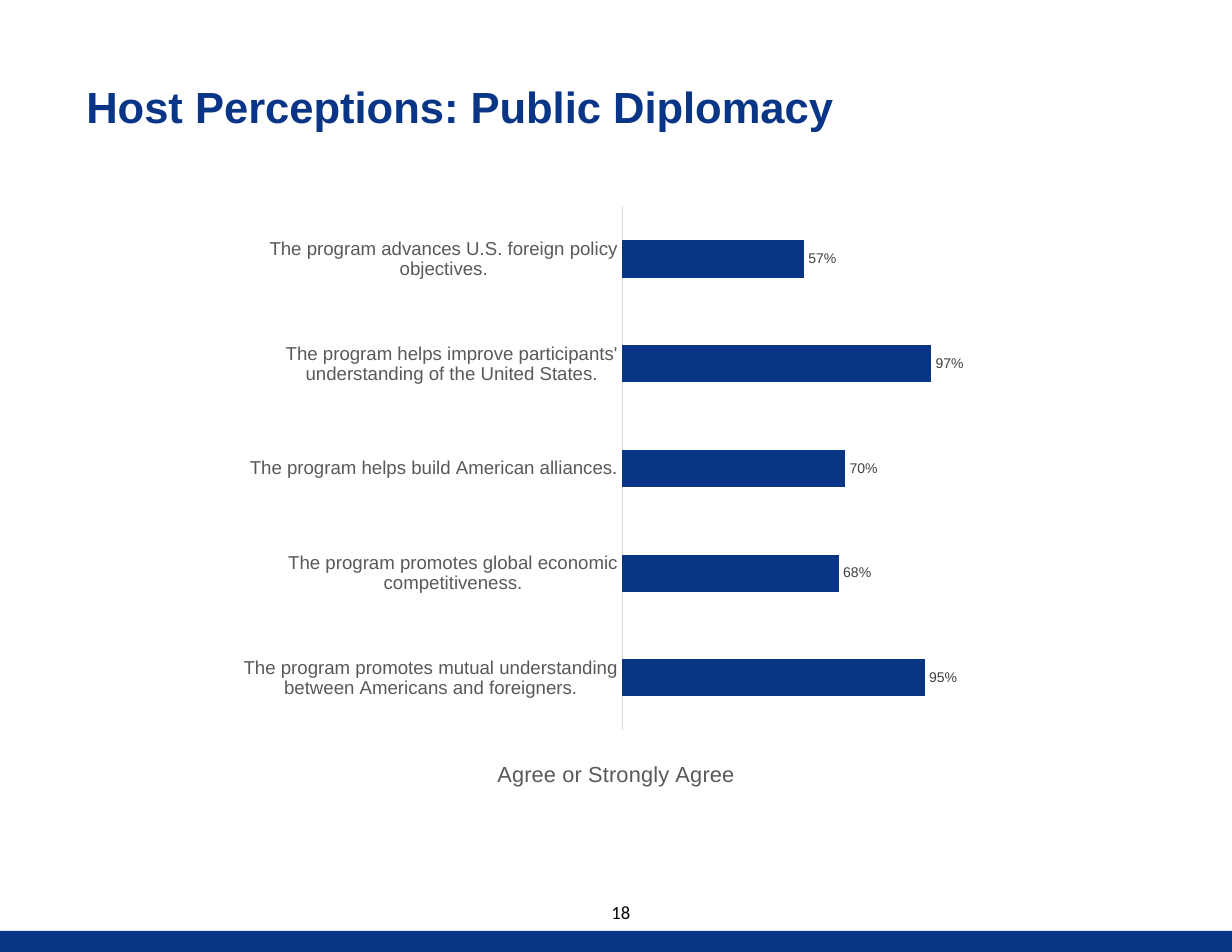
import pptx
import pptx.chart.data
import pptx.dml.color
import pptx.enum.chart
import pptx.enum.shapes
import pptx.enum.text
import pptx.util
from lxml import etree
from pptx.oxml.ns import qn

Pt = pptx.util.Pt
RGBColor = pptx.dml.color.RGBColor

BLUE = RGBColor(0x09, 0x35, 0x87)
BLACK = RGBColor(0, 0, 0)
GREY = RGBColor(0x59, 0x59, 0x59)
DARK_GREY = RGBColor(0x40, 0x40, 0x40)
LIGHT_GREY = RGBColor(0xD9, 0xD9, 0xD9)

AGREEMENT = {
    "The program promotes mutual understanding between Americans and foreigners.": 0.95,
    "The program promotes global economic competitiveness.": 0.68,
    "The program helps build American alliances.": 0.70,
    "The program helps improve participants' understanding of the United States.": 0.97,
    "The program advances U.S. foreign policy objectives.": 0.57,
}
SERIES_NAME = "Agree or Strongly Agree"
PERCENT = "####%"


def format_font(font, size, color, name="Arial", bold=False):
    for key, value in {"size": Pt(size), "name": name, "bold": bold}.items():
        setattr(font, key, value)
    font.color.rgb = color


def set_layout(parent, position, **values):
    """Place a chart part by fractions of the chart area."""
    for old in parent.findall(qn("c:layout")):
        parent.remove(old)
    layout = etree.Element(qn("c:layout"))
    parent.insert(position, layout)
    manual = etree.SubElement(layout, qn("c:manualLayout"))
    for tag, value in values.items():
        etree.SubElement(manual, qn(f"c:{tag}")).set("val", str(value))


presentation = pptx.Presentation()
presentation.slide_width = Pt(792)
presentation.slide_height = Pt(612)
slide = presentation.slides.add_slide(presentation.slide_layouts[5])

# Footer band
band = slide.shapes.add_shape(
    pptx.enum.shapes.MSO_SHAPE.RECTANGLE, Pt(0), Pt(598.5), Pt(792), Pt(14))
band.shadow.inherit = False
band.fill.solid()
band.fill.fore_color.rgb = BLUE
band.line.fill.background()

# Title
title = slide.shapes.title
title_box = {"left": 47.5, "top": 17.3, "width": 554.4, "height": 102.2}
for key, value in title_box.items():
    setattr(title, key, Pt(value))
title_frame = title.text_frame
title_frame.text = "Host Perceptions: Public Diplomacy"
frame_format = {
    "margin_left": Pt(8), "margin_right": Pt(8),
    "margin_top": Pt(4), "margin_bottom": Pt(4),
    "vertical_anchor": pptx.enum.text.MSO_ANCHOR.MIDDLE,
    "auto_size": pptx.enum.text.MSO_AUTO_SIZE.NONE,
}
for key, value in frame_format.items():
    setattr(title_frame, key, value)
title_paragraph = title_frame.paragraphs[0]
title_paragraph.alignment = pptx.enum.text.PP_ALIGN.LEFT
format_font(title_paragraph.runs[0].font, 28, BLUE, bold=True)

# Bar chart
chart_data = pptx.chart.data.CategoryChartData(number_format=PERCENT)
chart_data.categories = list(AGREEMENT)
chart_data.add_series(SERIES_NAME, list(AGREEMENT.values()))
chart = slide.shapes.add_chart(
    pptx.enum.chart.XL_CHART_TYPE.BAR_CLUSTERED,
    Pt(133.2), Pt(118), Pt(525.6), Pt(392.4), chart_data).chart
format_font(chart.font, 10, BLACK)
chart.has_legend = False

chart.has_title = True
chart_title = chart.chart_title
chart_title.text_frame.text = SERIES_NAME
format_font(chart_title.text_frame.paragraphs[0].runs[0].font, 14, GREY)
chart_title.include_in_layout = False
set_layout(chart_title._element, 1, xMode="edge", yMode="edge", x=0.35, y=0.94)
set_layout(chart._chartSpace.chart.plotArea, 0, layoutTarget="inner",
           xMode="edge", yMode="edge", x=0.508, y=0.038, w=0.467, h=0.859)

category_axis = chart.category_axis
category_axis.major_tick_mark = pptx.enum.chart.XL_TICK_MARK.NONE
category_axis.format.line.color.rgb = LIGHT_GREY
category_axis.format.line.width = Pt(0.75)
format_font(category_axis.tick_labels.font, 12, GREY)

value_axis = chart.value_axis
axis_format = {"minimum_scale": 0, "maximum_scale": 1.2,
               "has_major_gridlines": False, "visible": False}
for key, value in axis_format.items():
    setattr(value_axis, key, value)

plot = chart.plots[0]
plot.gap_width = 182
plot.vary_by_categories = False
series = plot.series[0]
series.format.fill.solid()
series.format.fill.fore_color.rgb = BLUE
labels = series.data_labels
label_format = {
    "show_value": True, "number_format": PERCENT, "number_format_is_linked": False,
    "position": pptx.enum.chart.XL_LABEL_POSITION.OUTSIDE_END,
}
for key, value in label_format.items():
    setattr(labels, key, value)
format_font(labels.font, 9, DARK_GREY)

# Page number
page_number = slide.shapes.add_textbox(Pt(386), Pt(575.3), Pt(33), Pt(21.6))
page_number.text_frame.word_wrap = True
page_number.text_frame.text = "18"
format_font(page_number.text_frame.paragraphs[0].runs[0].font, 12, BLACK, "Calibri")

presentation.save("out.pptx")
